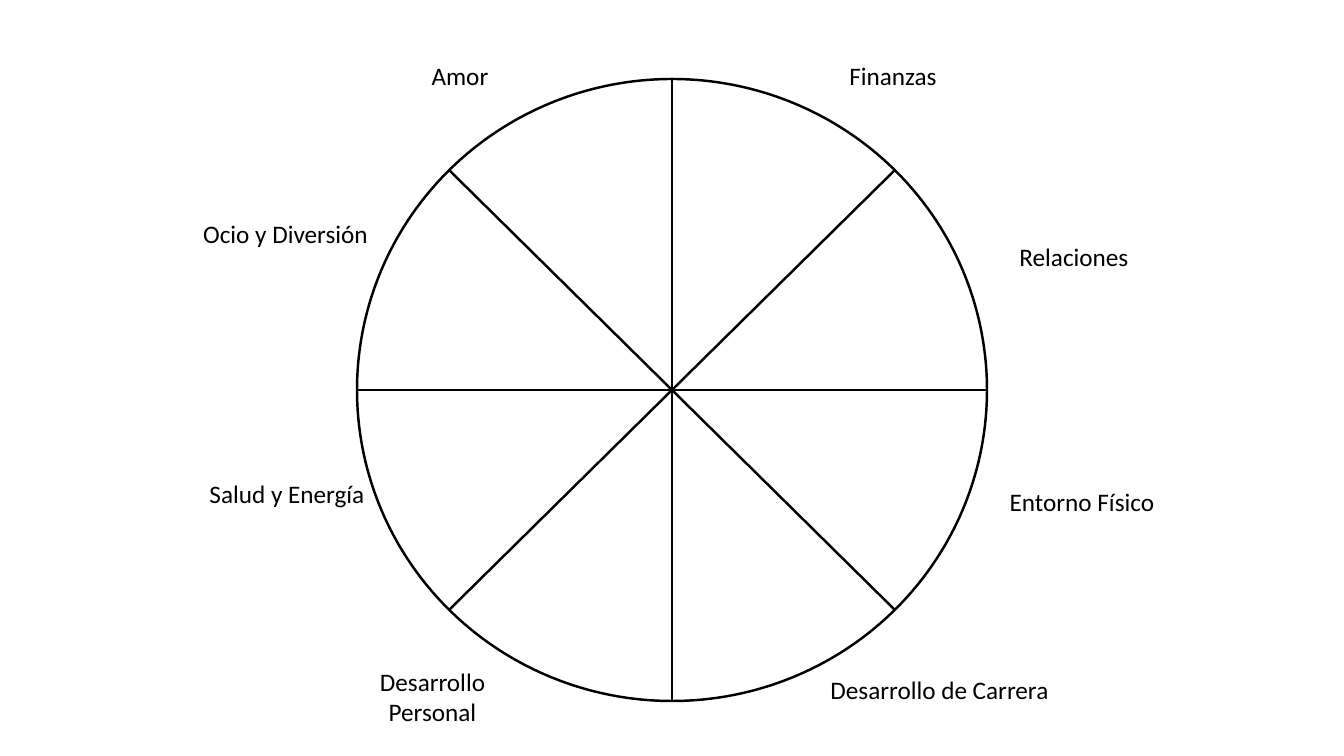
from math import cos, pi, sin

from lxml.etree import SubElement
from pptx import Presentation
from pptx.dml.color import RGBColor
from pptx.enum.shapes import MSO_CONNECTOR, MSO_SHAPE
from pptx.enum.text import MSO_AUTO_SIZE, PP_ALIGN
from pptx.oxml.ns import qn
from pptx.util import Emu, Pt

BLACK = RGBColor(0, 0, 0)
CENTER_X, CENTER_Y = 672, 390
RADIUS_X, RADIUS_Y = 315, 311
SPOKES = 4
LABELS = [
    ("Amor", 365, 55, 190, 40),
    ("Finanzas", 798, 55, 190, 40),
    ("Relaciones", 979, 236, 190, 40),
    ("Entorno Físico", 987, 481, 190, 40),
    ("Desarrollo de Carrera", 814, 669, 251, 40),
    ("Desarrollo Personal", 326, 661, 213, 72),
    ("Salud y Energía", 192, 473, 190, 40),
    ("Ocio y Diversión", 175, 213, 221, 40),
]


def px(length):
    return Emu(round(length * 914400 / 100.8))


def style_line(shape):
    shape.line.color.rgb = BLACK
    shape.line.width = Pt(1.75)


deck = Presentation()
deck.slide_width, deck.slide_height = px(1344), px(756)
page = deck.slides.add_slide(deck.slide_layouts[6])

wheel = page.shapes.add_shape(
    MSO_SHAPE.FLOWCHART_CONNECTOR,
    px(CENTER_X - RADIUS_X), px(CENTER_Y - RADIUS_Y),
    px(2 * RADIUS_X), px(2 * RADIUS_Y),
)
wheel.shadow.inherit = False
wheel.fill.background()
style_line(wheel)

for index in range(SPOKES):
    angle = index * pi / SPOKES
    reach_x = round(RADIUS_X * cos(angle))
    reach_y = round(RADIUS_Y * sin(angle))
    spoke = page.shapes.add_connector(
        MSO_CONNECTOR.STRAIGHT,
        px(CENTER_X - reach_x), px(CENTER_Y - reach_y),
        px(CENTER_X + reach_x), px(CENTER_Y + reach_y),
    )
    style_line(spoke)
    SubElement(spoke._element.spPr, qn("a:effectLst"))

for label, left, top, width, height in LABELS:
    box = page.shapes.add_textbox(px(left), px(top), px(width), px(height))
    frame = box.text_frame
    frame.word_wrap = True
    frame.auto_size = MSO_AUTO_SIZE.SHAPE_TO_FIT_TEXT
    frame.text = label
    para = frame.paragraphs[0]
    para.alignment = PP_ALIGN.CENTER
    font = para.runs[0].font
    font.name = "Calibri"
    font.size = Pt(18)
    font.color.rgb = BLACK

deck.save("out.pptx")
